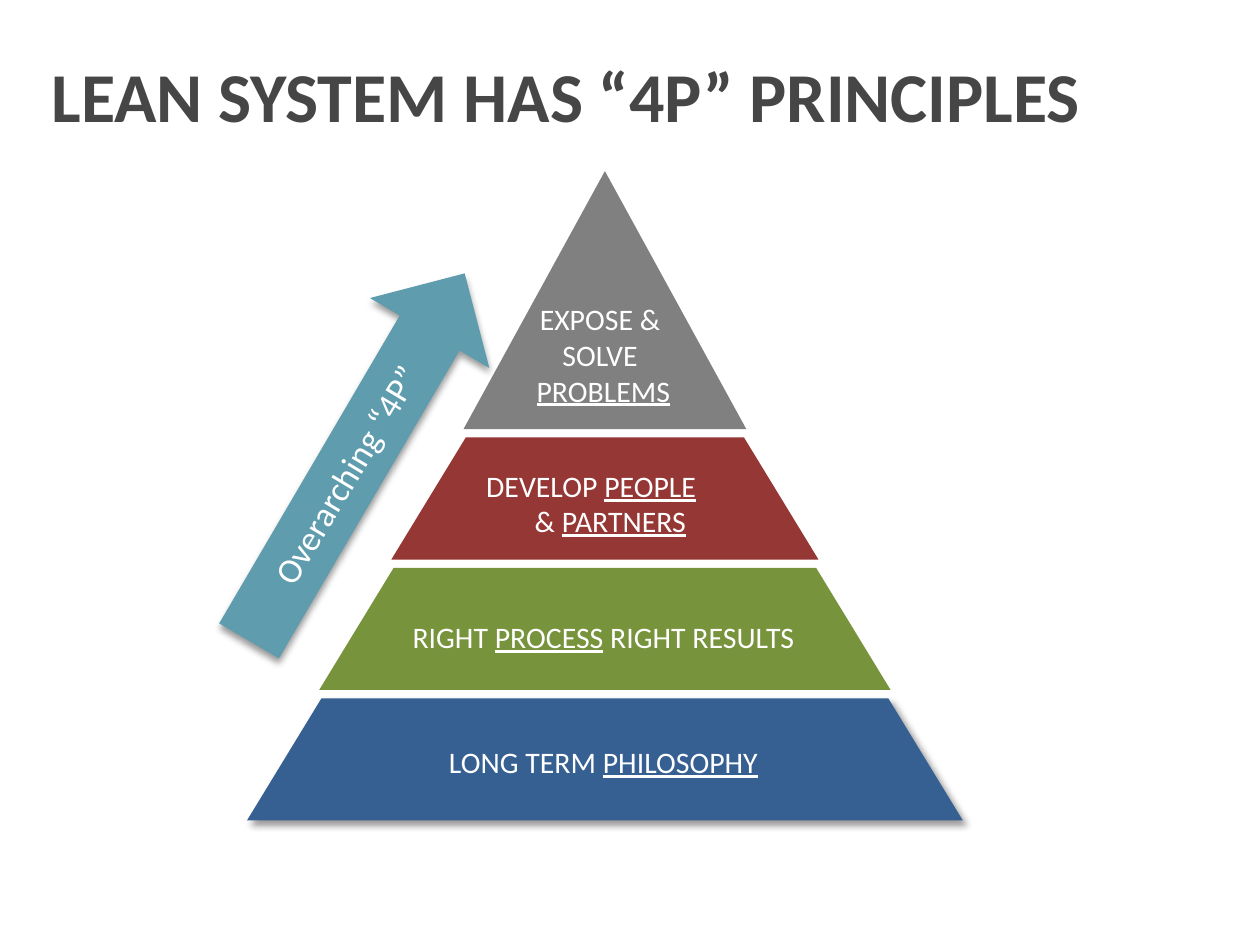
from lxml import etree
from pptx import Presentation
from pptx.dml.color import RGBColor
from pptx.enum.shapes import MSO_SHAPE
from pptx.enum.text import MSO_ANCHOR, PP_ALIGN
from pptx.oxml import parse_xml
from pptx.oxml.ns import nsdecls
from pptx.util import Cm, Pt

WHITE = RGBColor(0xFF, 0xFF, 0xFF)
DARK = RGBColor(0x46, 0x46, 0x46)
GREY = RGBColor(0x80, 0x80, 0x80)
RED = RGBColor(0x95, 0x37, 0x35)
GREEN = RGBColor(0x77, 0x93, 0x3C)
BLUE = RGBColor(0x37, 0x60, 0x92)
TEAL = RGBColor(0x5E, 0x9C, 0xAE)

# From the base up: colour, lines of (text, underlined) runs joined in paragraphs,
# and the label's offset from the tier's axis, drop from its top, width and height.
TIERS = [
    (BLUE, [[("LONG TERM ", False), ("PHILOSOPHY", True)]],
     -0.03, 0.79, 11.79, 0.99),
    (GREEN, [[("RIGHT ", False), ("PROCESS", True), (" RIGHT RESULTS", False)]],
     -0.03, 0.89, 10.49, 0.99),
    (RED, [[("DEVELOP ", False), ("PEOPLE", True), (" \v& ", False), ("PARTNERS", True)]],
     -0.21, 0.48, 8, 1.7),
    (GREY, [[("EXPOSE & ", False)], [("SOLVE ", False)], [("PROBLEMS", True)]],
     -0.03, 2.49, 5.13, 2.44),
]


def add_text(s, box, paragraphs, size=17, color=WHITE, bold=False, align=PP_ALIGN.CENTER,
             anchor=MSO_ANCHOR.TOP, inset=None, hanging=0, rotation=0):
    """Place paragraphs, each a list of (text, underlined) runs; \\v breaks a line."""
    sp = s.shapes.add_textbox(*map(Cm, box))
    sp.rotation = rotation
    tf = sp.text_frame
    tf.word_wrap = True
    tf.vertical_anchor = anchor
    if inset is not None:
        tf.margin_left = tf.margin_top = tf.margin_right = tf.margin_bottom = Cm(inset)
    for i, runs in enumerate(paragraphs):
        p = tf.add_paragraph() if i else tf.paragraphs[0]
        p.alignment = align
        if hanging:
            pPr = p._p.get_or_add_pPr()
            pPr.set("marL", str(Cm(hanging)))
            pPr.set("indent", str(-Cm(hanging)))
        for text, underlined in runs:
            for j, part in enumerate(text.split("\v")):
                if j:
                    p.add_line_break()
                r = p.add_run()
                r.text = part
                r.font.name = "Calibri"
                r.font.size = Pt(size)
                r.font.bold = bold
                r.font.underline = underlined
                r.font.color.rgb = color


def add_filled(s, kind, box, color):
    sp = s.shapes.add_shape(kind, *map(Cm, box))
    sp.fill.solid()
    sp.fill.fore_color.rgb = color
    sp.line.fill.background()
    sp.shadow.inherit = False
    return sp


def add_shadow(sp, angle):
    effects = sp._element.spPr.find("{*}effectLst")
    shadow = parse_xml(
        f'<a:outerShdw {nsdecls("a")} blurRad="{Pt(4)}" dist="{Pt(3)}" '
        f'dir="{angle * 60000}" algn="ctr" rotWithShape="0"/>')
    ns = "{%s}" % shadow.nsmap["a"]
    color = etree.SubElement(shadow, ns + "srgbClr", val="000000")
    etree.SubElement(color, ns + "alpha", val="40000")
    effects.append(shadow)


def add_title(s, box):
    add_text(s, box, [[("LEAN SYSTEM HAS “4P” PRINCIPLES", False)]], size=40, color=DARK,
             bold=True, align=PP_ALIGN.LEFT, anchor=MSO_ANCHOR.MIDDLE, inset=0)


def add_pyramid(s, left, top, width, height):
    """Stack equal trapezoids from the base, with a triangle filling the rest."""
    tier_h, pitch, narrowing = 2.46, 2.63, 2.91
    axis = left + width / 2
    labels = []
    for i, (color, paragraphs, dx, drop, label_w, label_h) in enumerate(TIERS):
        is_peak = i == len(TIERS) - 1
        w = width - i * narrowing
        h = height - i * pitch if is_peak else tier_h
        y = top + height - i * pitch - h
        kind = MSO_SHAPE.ISOSCELES_TRIANGLE if is_peak else MSO_SHAPE.TRAPEZOID
        sp = add_filled(s, kind, (axis - w / 2, y, w, h), color)
        sp.adjustments[0] = 0.5 if is_peak else 0.61
        if i == 0:
            add_shadow(sp, 45)
        labels.append(((axis + dx - label_w / 2, y + drop, label_w, label_h), paragraphs))
    for box, paragraphs in labels:
        add_text(s, box, paragraphs, hanging=0.64)


def add_rising_arrow(s, left, top, width, height):
    sp = add_filled(s, MSO_SHAPE.RIGHT_ARROW, (left, top, width, height), TEAL)
    sp.rotation = 300.4
    add_shadow(sp, 90)
    add_text(s, (left + 0.58, top + 1.19, 6.99, 1.12), [[("Overarching “4P”", False)]],
             size=20, rotation=301)


def main():
    prs = Presentation()
    prs.slide_width, prs.slide_height = Cm(25.4), Cm(19.05)
    s = prs.slides.add_slide(prs.slide_layouts[6])
    add_pyramid(s, 4.98, 3.45, 14.43, 13.09)
    add_rising_arrow(s, 2.9, 7.82, 8.59, 2.79)
    add_title(s, (1.04, 0.38, 22.86, 3.07))
    prs.save("out.pptx")


if __name__ == "__main__":
    main()
